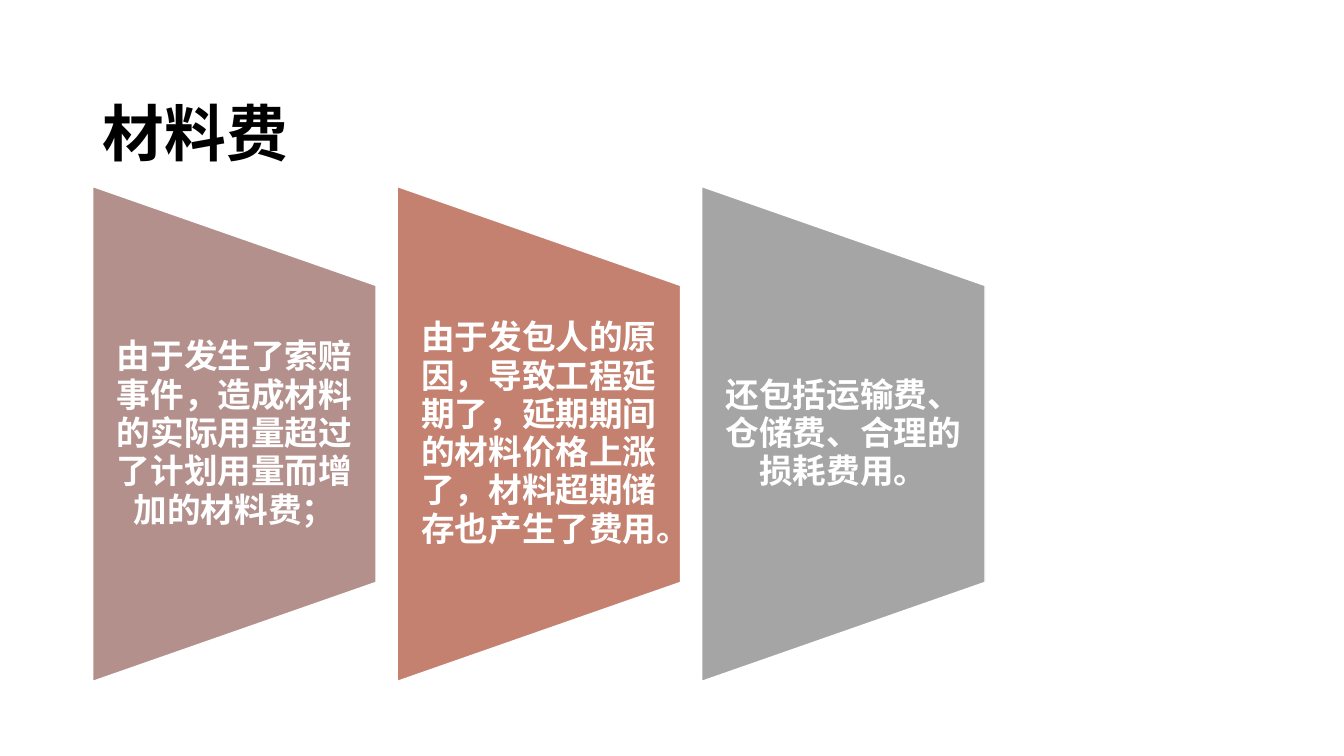
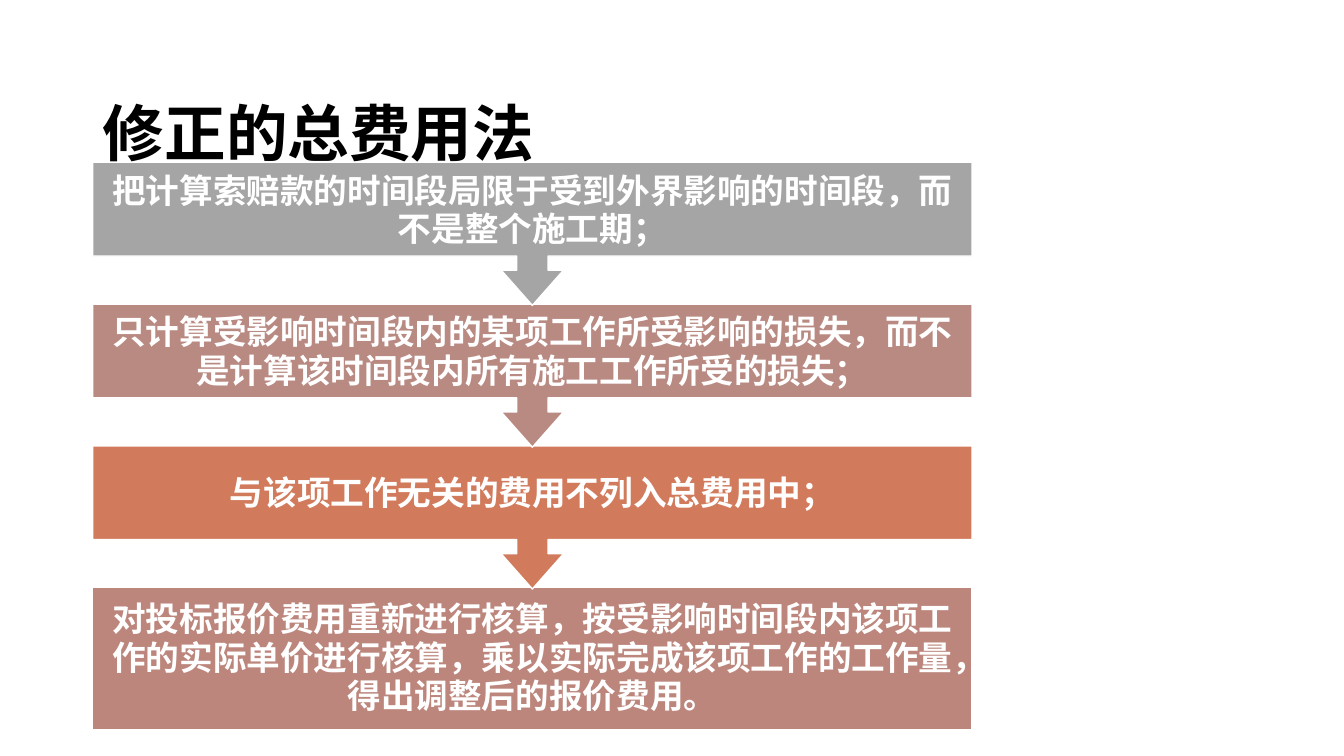
from dataclasses import dataclass

from lxml.etree import SubElement
from pptx import Presentation
from pptx.dml.color import RGBColor
from pptx.enum.shapes import MSO_SHAPE
from pptx.enum.text import MSO_ANCHOR, MSO_AUTO_SIZE, PP_ALIGN
from pptx.oxml.ns import qn
from pptx.util import Inches, Pt


@dataclass(frozen=True)
class Theme:
    black: str = "000000"
    white: str = "FFFFFF"
    gray: str = "A5A5A5"
    mauve: str = "B3908C"
    clay: str = "C48170"
    rose: str = "B98A82"
    orange: str = "D17B5C"
    brick: str = "BC867C"
    latin: str = "Times New Roman"
    chinese: str = "Noto Sans CJK SC"
    title_size: int = 44
    body_size: int = 24
    title_spacing: float = 1.5
    body_spacing: float = 0.95
    outline: int = 1


THEME = Theme()
LEFT = 0.92

MATERIAL_TITLE = "材料费"
MATERIAL_COSTS = [
    ("由于发生了索赔事件，造成材料的实际用量超过了计划用量而增加的材料费；", THEME.mauve),
    ("由于发包人的原因，导致工程延期了，延期期间的材料价格上涨了，材料超期储存也产生了费用。", THEME.clay),
    ("还包括运输费、仓储费、合理的损耗费用。", THEME.gray),
]

METHOD_TITLE = "修正的总费用法"
METHOD_STEPS = [
    ("把计算索赔款的时间段局限于受到外界影响的时间段，而不是整个施工期；", THEME.gray),
    ("只计算受影响时间段内的某项工作所受影响的损失，而不是计算该时间段内所有施工工作所受的损失；", THEME.rose),
    ("与该项工作无关的费用不列入总费用中；", THEME.orange),
    ("对投标报价费用重新进行核算，按受影响时间段内该项工作的实际单价进行核算，"
     "乘以实际完成该项工作的工作量，得出调整后的报价费用。", THEME.brick),
]


def style_paragraph(paragraph, size, color, spacing, align, latin):
    paragraph.alignment = align
    paragraph.line_spacing = spacing
    font = paragraph.font
    font.size = Pt(size)
    font.bold = True
    font.color.rgb = RGBColor.from_string(color)
    font.name = latin
    defaults = paragraph._p.pPr.find(qn("a:defRPr"))
    SubElement(defaults, qn("a:ea"), typeface=THEME.chinese)


def add_titled_slide(prs, title):
    slide = prs.slides.add_slide(prs.slide_layouts[5])
    frame = slide.shapes.title.text_frame
    frame.text = title
    frame.auto_size = MSO_AUTO_SIZE.NONE
    frame.vertical_anchor = MSO_ANCHOR.MIDDLE
    style_paragraph(frame.paragraphs[0], THEME.title_size, THEME.black,
                    THEME.title_spacing, PP_ALIGN.LEFT, THEME.latin)
    return slide


def fill_block(block, text, color, latin, insets):
    """Colour a block and set its text; insets run left, top, right, bottom."""
    block.shadow.inherit = False
    block.fill.solid()
    block.fill.fore_color.rgb = RGBColor.from_string(color)
    block.line.color.rgb = RGBColor.from_string(THEME.white)
    block.line.width = Pt(THEME.outline)
    frame = block.text_frame
    frame.word_wrap = True
    frame.vertical_anchor = MSO_ANCHOR.MIDDLE
    (frame.margin_left, frame.margin_top,
     frame.margin_right, frame.margin_bottom) = map(Inches, insets)
    frame.text = text
    style_paragraph(frame.paragraphs[0], THEME.body_size, THEME.white,
                    THEME.body_spacing, PP_ALIGN.CENTER, latin)


def add_material_slide(prs):
    slide = add_titled_slide(prs, MATERIAL_TITLE)
    top, width, height, gap = 1.85, 2.81, 4.91, 0.21
    slope = height / 5
    for i, (text, color) in enumerate(MATERIAL_COSTS):
        left = LEFT + i * (width + gap)
        right, bottom = left + width, top + height
        outline = slide.shapes.build_freeform(Inches(left), Inches(bottom))
        corners = [(left, top), (right, top + slope), (right, bottom - slope)]
        outline.add_line_segments([(Inches(x), Inches(y)) for x, y in corners])
        trapezoid = outline.convert_to_shape()
        fill_block(trapezoid, text, color, THEME.latin, (0.17, 0.95, 0.17, 0.95))


def add_method_slide(prs):
    slide = add_titled_slide(prs, METHOD_TITLE)
    first_top, last_top = 1.61, 5.83
    width, callout_height, last_height = 8.72, 1.42, 1.41
    shaft_width, head_half, head_length, box_height = 0.31, 0.31, 0.35, 0.93
    last = len(METHOD_STEPS) - 1
    pitch = (last_top - first_top) / last
    # Later steps lie behind, so each arrow tip overlaps the next box.
    for i, (text, color) in reversed(list(enumerate(METHOD_STEPS))):
        is_last = i == last
        preset = MSO_SHAPE.RECTANGLE if is_last else MSO_SHAPE.DOWN_ARROW_CALLOUT
        height = last_height if is_last else callout_height
        step = slide.shapes.add_shape(
            preset, Inches(LEFT), Inches(first_top + i * pitch),
            Inches(width), Inches(height))
        if not is_last:
            parts = (shaft_width, head_half, head_length, box_height)
            for k, part in enumerate(parts):
                step.adjustments[k] = part / callout_height
        bottom_inset = 0.19 if is_last else 0.16
        fill_block(step, text, color, THEME.chinese, (0.19, 0.19, 0.19, bottom_inset))


def main():
    prs = Presentation()
    prs.slide_width, prs.slide_height = Inches(13.33), Inches(7.5)
    title = prs.slide_layouts[5].placeholders[0]
    title.left, title.top = Inches(LEFT), Inches(0.4)
    title.width, title.height = Inches(11.5), Inches(1.45)
    add_material_slide(prs)
    add_method_slide(prs)
    prs.save("out.pptx")


if __name__ == "__main__":
    main()
